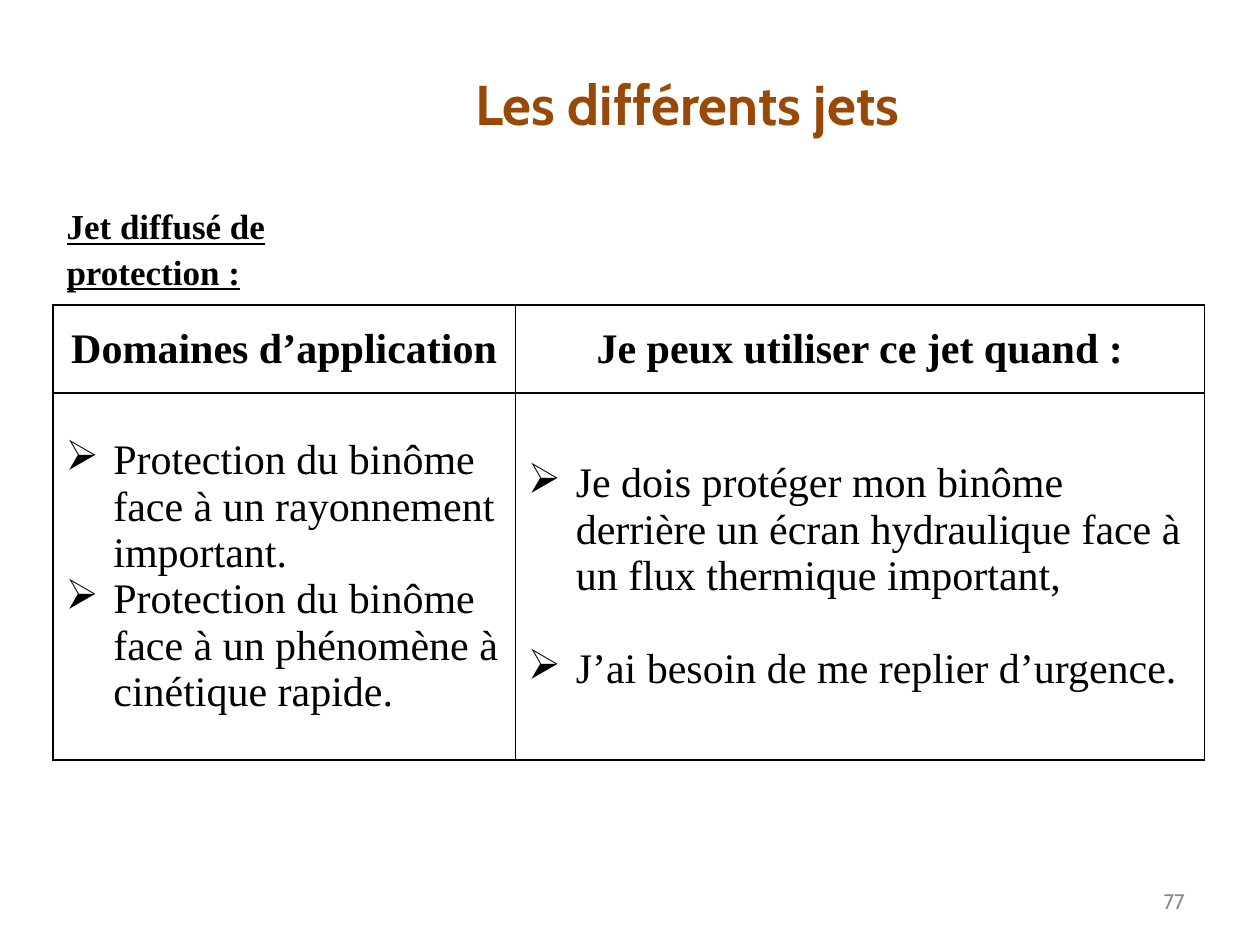
from dataclasses import dataclass

from pptx import Presentation
from pptx.dml.color import RGBColor
from pptx.enum.text import MSO_ANCHOR, PP_ALIGN
from pptx.oxml import parse_xml
from pptx.oxml.ns import nsdecls
from pptx.util import Inches, Pt

SERIF, SANS = "Times New Roman", "Cabin"
BLACK, BROWN, GREY, WHITE = "000000", "984807", "898989", "FFFFFF"
COLUMNS, ROWS = (3.67, 5.47), (0.7, 2.91)


@dataclass
class Style:
    size: float
    font: str = SERIF
    color: str = BLACK
    bold: bool = False
    underline: bool = False
    align: PP_ALIGN = PP_ALIGN.LEFT


@dataclass
class Label:
    text: str
    box: tuple[float, float, float, float]
    style: Style
    anchor: MSO_ANCHOR = MSO_ANCHOR.MIDDLE
    line_spacing: float = 1.0


@dataclass
class Column:
    heading: str
    points: list[str]
    gap: float = 0


HEADING = Style(24, bold=True, align=PP_ALIGN.CENTER)
BODY = Style(24)

LABELS = [
    Label("77", (7.17, 6.95, 2.33, 0.4),
          Style(12, SANS, GREY, align=PP_ALIGN.RIGHT)),
    Label("Les différents jets", (1.22, 0.3, 8.47, 1.03),
          Style(32, SANS, BROWN, bold=True, align=PP_ALIGN.CENTER)),
    Label("Jet diffusé de protection :", (0.43, 1.55, 3, 0.75),
          Style(20, bold=True, underline=True), MSO_ANCHOR.TOP, 1.08),
]

JET_COLUMNS = [
    Column("Domaines d’application", [
        "Protection du binôme face à un rayonnement important.",
        "Protection du binôme face à un phénomène à cinétique rapide.",
    ]),
    Column("Je peux utiliser ce jet quand\u00a0:", [
        "Je dois protéger mon binôme derrière un écran hydraulique face à "
        "un flux thermique important,",
        "J’ai besoin de me replier d’urgence.",
    ], gap=26.5),
]


def rgb(color: str) -> RGBColor:
    return RGBColor.from_string(color)


def write(p, text: str, style: Style) -> None:
    p.text = text
    p.alignment = style.align
    for r in p.runs:
        f = r.font
        f.size, f.name, f.bold = Pt(style.size), style.font, style.bold
        f.underline = style.underline
        f.color.rgb = rgb(style.color)


def add_label(s, label: Label) -> None:
    sp = s.shapes.add_textbox(*map(Inches, label.box))
    tf = sp.text_frame
    tf.word_wrap = True
    tf.vertical_anchor = label.anchor
    p = tf.paragraphs[0]
    write(p, label.text, label.style)
    p.line_spacing = label.line_spacing


def add_bullet(p) -> None:
    pPr = p._p.get_or_add_pPr()
    pPr.set("marL", str(Inches(0.38)))
    pPr.set("indent", str(-Inches(0.38)))
    pPr.append(parse_xml(f'<a:buChar {nsdecls("a")} char="➢"/>'))


def format_cell(cell) -> None:
    # Borders come before the fill in the cell properties
    tcPr = cell._tc.get_or_add_tcPr()
    for side in ("lnL", "lnR", "lnT", "lnB"):
        tcPr.append(parse_xml(
            f'<a:{side} {nsdecls("a")} w="{Pt(1)}"><a:solidFill>'
            f'<a:srgbClr val="{BLACK}"/></a:solidFill></a:{side}>'))
    cell.fill.solid()
    cell.fill.fore_color.rgb = rgb(WHITE)
    cell.vertical_anchor = MSO_ANCHOR.MIDDLE


def add_jet_table(s, columns: list[Column]) -> None:
    table = s.shapes.add_table(
        len(ROWS), len(columns), Inches(0.42), Inches(2.42),
        Inches(sum(COLUMNS)), Inches(sum(ROWS))).table
    for row, height in zip(table.rows, ROWS):
        row.height = Inches(height)
    for i, column in enumerate(columns):
        table.columns[i].width = Inches(COLUMNS[i])
        head, body = table.cell(0, i), table.cell(1, i)
        format_cell(head)
        format_cell(body)
        write(head.text_frame.paragraphs[0], column.heading, HEADING)
        tf = body.text_frame
        for n, point in enumerate(column.points):
            p = tf.add_paragraph() if n else tf.paragraphs[0]
            add_bullet(p)
            write(p, point, BODY)
            if n:
                p.space_before = Pt(column.gap)


def main() -> None:
    prs = Presentation()
    prs.slide_width, prs.slide_height = Inches(10), Inches(7.5)
    s = prs.slides.add_slide(prs.slide_layouts[6])
    # Page number, title and subheading
    for label in LABELS:
        add_label(s, label)
    # Uses of the jet
    add_jet_table(s, JET_COLUMNS)
    prs.save("out.pptx")


if __name__ == "__main__":
    main()
